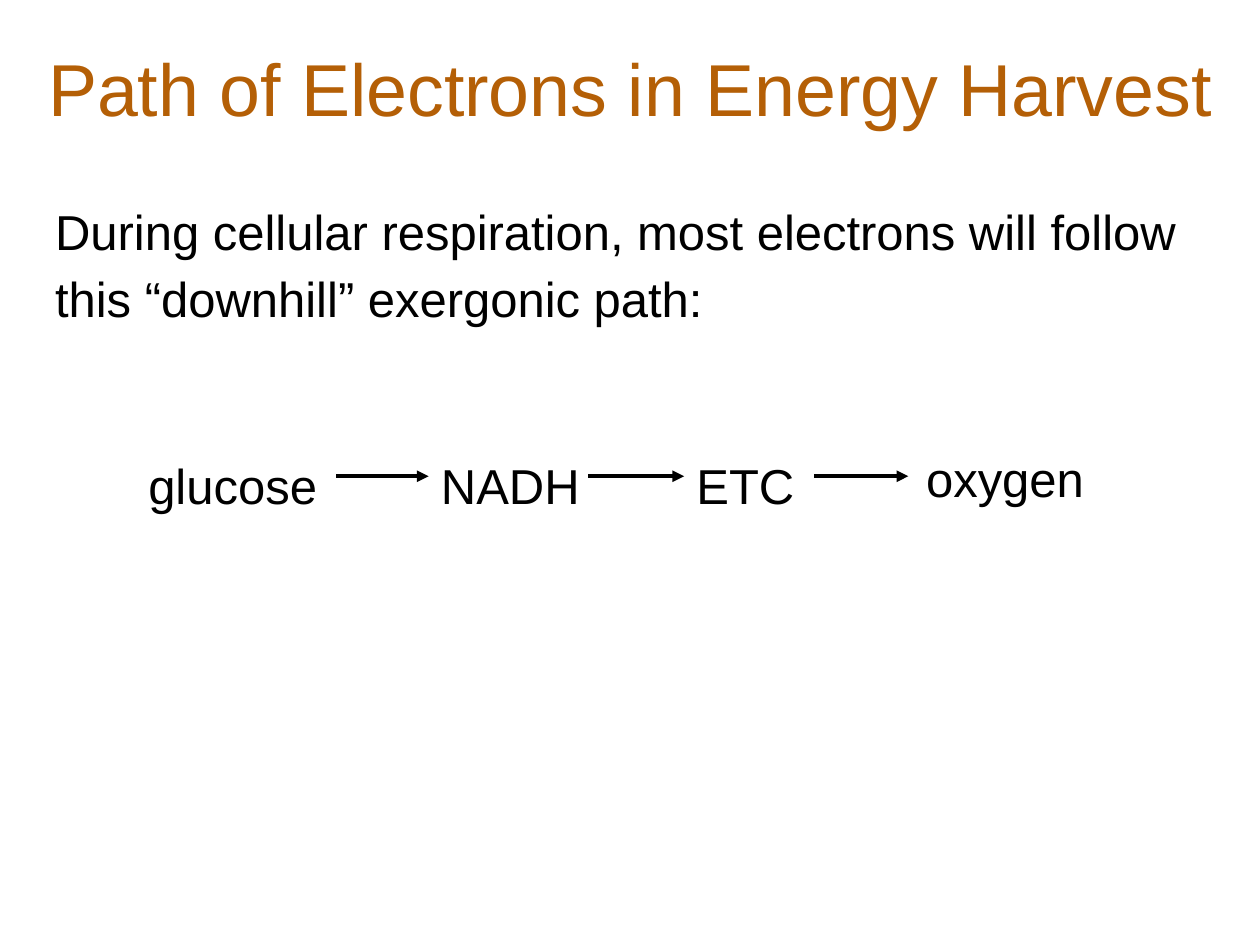
"""Build a slide showing the path of electrons in cellular respiration."""
from lxml.etree import SubElement
from pptx import Presentation
from pptx.dml.color import RGBColor
from pptx.enum.shapes import MSO_CONNECTOR as Connector
from pptx.enum.text import MSO_ANCHOR as Anchor, MSO_AUTO_SIZE as AutoSize, PP_ALIGN as Align
from pptx.oxml.ns import qn
from pptx.util import Cm, Pt

COLORS = {"title": "B45F06", "text": "000000", "background": "FFFFFF"}


def write_text(shape, text, size, color, align=Align.LEFT):
    text_frame = shape.text_frame
    text_frame.text = text
    text_frame.word_wrap = True
    text_frame.auto_size = AutoSize.NONE
    text_frame.vertical_anchor = Anchor.TOP
    text_frame.margin_left = text_frame.margin_right = Cm(0.25)
    text_frame.margin_top = text_frame.margin_bottom = Cm(0.25)
    paragraph = text_frame.paragraphs[0]
    paragraph.alignment = align
    paragraph.space_before = Pt(0)
    font = paragraph.runs[0].font
    font.name = "Arial"
    font.size = Pt(size)
    font.color.rgb = RGBColor.from_string(COLORS[color])
    return paragraph


def place(shape, left, top, width, height):
    shape.left, shape.top = Cm(left), Cm(top)
    shape.width, shape.height = Cm(width), Cm(height)


presentation = Presentation()
presentation.slide_width = Cm(25.4)
presentation.slide_height = Cm(19.05)
slide = presentation.slides.add_slide(presentation.slide_layouts[1])
slide.background.fill.solid()
slide.background.fill.fore_color.rgb = RGBColor.from_string(COLORS["background"])

title = slide.shapes.title
place(title, 0.64, 0.61, 24.13, 2.11)
write_text(title, "Path of Electrons in Energy Harvest", 42, "title", Align.CENTER)

body = slide.placeholders[1]
place(body, 0.86, 3.63, 23.67, 3.63)
paragraph = write_text(
    body,
    "During cellular respiration, most electrons will follow this “downhill” exergonic path:",
    28,
    "text",
)
paragraph.line_spacing = 1.15
paragraph.space_after = Pt(16)
properties = paragraph._p.get_or_add_pPr()
properties.set("marL", "0")
properties.set("indent", "0")
SubElement(properties, qn("a:buNone"))

steps = [
    ("glucose", 2.74, 8.76, 4.04),
    ("NADH", 8.64, 8.76, 3.43),
    ("ETC", 13.79, 8.76, 2.51),
    ("oxygen", 18.42, 8.61, 4.04),
]
boxes = {}
for name, left, top, width in steps:
    box = slide.shapes.add_textbox(Cm(left), Cm(top), Cm(width), Cm(1.68))
    paragraph = write_text(box, name, 28, "text")
    paragraph.line_spacing = 1.15
    paragraph.space_after = Pt(16)
    boxes[name] = box

arrow_y = Cm(9.6)
arrows = [
    (6.76, 8.64, "glucose", "NADH"),
    (11.86, 13.79, None, "ETC"),
    (16.41, 18.31, None, None),
]
for start, end, source, target in arrows:
    arrow = slide.shapes.add_connector(Connector.STRAIGHT, Cm(start), arrow_y, Cm(end), arrow_y)
    if source:
        arrow.begin_connect(boxes[source], 3)
    if target:
        arrow.end_connect(boxes[target], 1)
    arrow.line.color.rgb = RGBColor.from_string(COLORS["text"])
    arrow.line.width = Pt(2.25)
    SubElement(arrow.line._get_or_add_ln(), qn("a:tailEnd"), type="triangle")
    SubElement(arrow._element.spPr, qn("a:effectLst"))

presentation.save("out.pptx")
